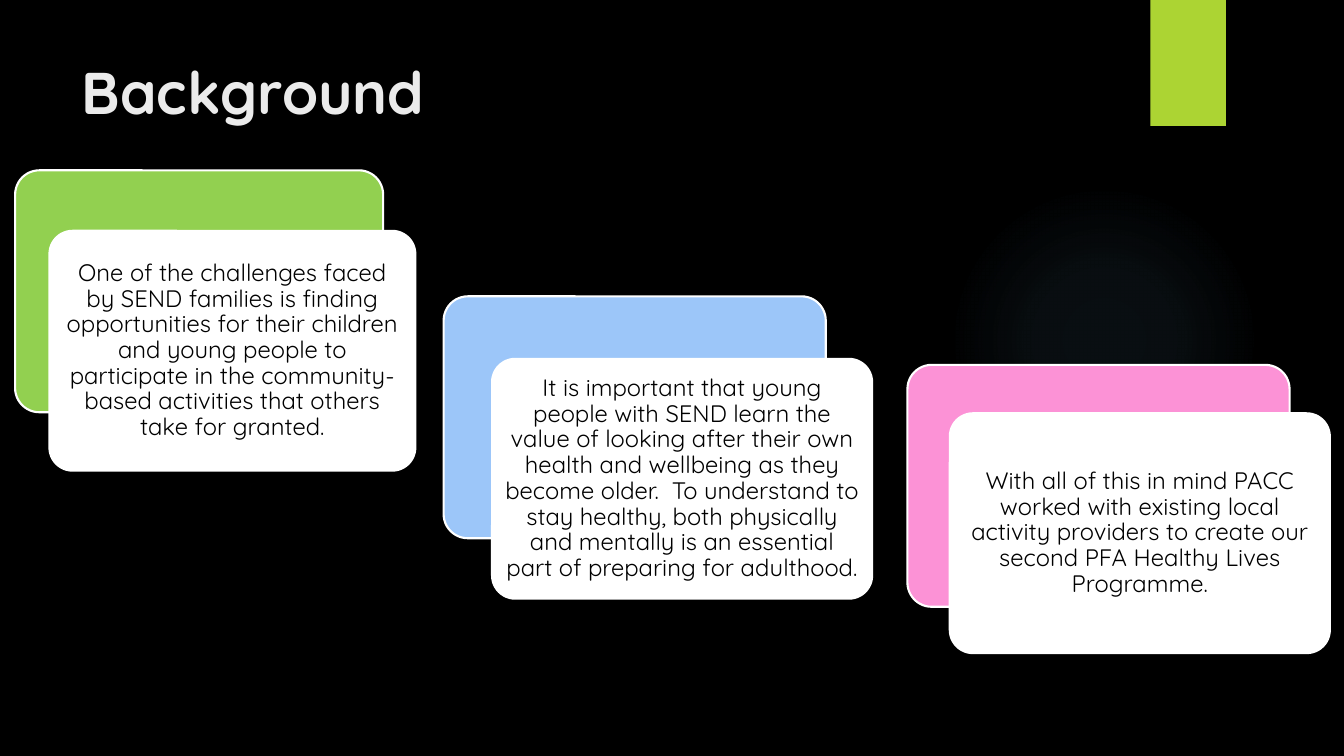
from lxml import etree
from pptx import Presentation
from pptx.dml.color import RGBColor
from pptx.enum.shapes import MSO_SHAPE
from pptx.enum.text import MSO_ANCHOR, MSO_AUTO_SIZE, PP_ALIGN
from pptx.oxml import parse_xml
from pptx.util import Inches, Pt

ELLIPSE, RECT, ROUNDED = MSO_SHAPE.OVAL, MSO_SHAPE.RECTANGLE, MSO_SHAPE.ROUNDED_RECTANGLE
TOP, MIDDLE = MSO_ANCHOR.TOP, MSO_ANCHOR.MIDDLE
LEFT, CENTER = PP_ALIGN.LEFT, PP_ALIGN.CENTER
NO_AUTOFIT = MSO_AUTO_SIZE.NONE
NS = "http://schemas.openxmlformats.org/drawingml/2006/main"

COLORS = {
    "black": "000000", "white": "FFFFFF", "title": "EBEBEB", "lime": "ACD433",
    "glow": "7AC4F0", "green": "92D050", "blue": "9CC6F9", "pink": "FC92D6",
}
GLOW_STOPS = [(0, 7), (36, 6), (69, 0)]
CARD_HEIGHT = 2.4
CARDS = [
    ("green", 3.65, (0.15, 1.69), (0.48, 2.28),
     "One of the challenges faced by SEND families is finding opportunities for their "
     "children and young people to participate in the community-based activities that "
     "others take for granted."),
    ("blue", 3.79, (4.4, 2.94), (4.87, 3.55),
     "It is important that young people with SEND learn the value of looking after their "
     "own health and wellbeing as they become older.  To understand to stay healthy, both "
     "physically and mentally is an essential part of preparing for adulthood. "),
    ("pink", 3.79, (9, 3.62), (9.41, 4.09),
     "With all of this in mind PACC worked with existing local activity providers to "
     "create our second PFA Healthy Lives Programme."),
]


def rgb(name):
    return RGBColor.from_string(COLORS[name])


class Deck:
    """Holds the style and current slide, and adds each kind of element."""

    font = "Quicksand"

    def __init__(self):
        self.prs = Presentation()
        self.prs.slide_width, self.prs.slide_height = Inches(13.33), Inches(7.5)
        self.s = self.prs.slides.add_slide(self.prs.slide_layouts[5])
        fill = self.s.background.fill
        fill.solid()
        fill.fore_color.rgb = rgb("black")

    def put_text(self, sp, text, color, frame, para, font):
        tf = sp.text_frame
        p = tf.paragraphs[0]
        r = p.add_run()
        r.text = text
        for target, values in ((tf, frame), (p, para), (r.font, font)):
            for key, value in values.items():
                setattr(target, key, value)
        r.font.name = self.font
        r.font.color.rgb = rgb(color)

    def title(self, text, x, y, w, h):
        sp = self.s.shapes.title
        sp.left, sp.top, sp.width, sp.height = map(Inches, (x, y, w, h))
        self.put_text(sp, text, "title",
                      {"vertical_anchor": TOP, "auto_size": NO_AUTOFIT, "word_wrap": True},
                      {"alignment": LEFT}, {"size": Pt(42), "bold": True})

    def shape(self, kind, x, y, w, h, fill, line=None):
        sp = self.s.shapes.add_shape(kind, *map(Inches, (x, y, w, h)))
        sp.shadow.inherit = False
        sp.fill.solid()
        sp.fill.fore_color.rgb = rgb(fill)
        if line:
            sp.line.color.rgb = rgb(line)
            sp.line.width = Pt(1.5)
        else:
            sp.line.fill.background()
        if kind == ROUNDED:
            sp.adjustments[0] = 0.1
        return sp

    def glow(self, x, y, size):
        sp = self.shape(ELLIPSE, x, y, size, size, "glow")
        stops = "".join(
            f'<a:gs pos="{pos * 1000}"><a:srgbClr val="{COLORS["glow"]}">'
            f'<a:alpha val="{alpha * 1000}"/></a:srgbClr></a:gs>'
            for pos, alpha in GLOW_STOPS)
        grad = parse_xml(
            f'<a:gradFill xmlns:a="{NS}"><a:gsLst>{stops}</a:gsLst><a:path path="circle">'
            '<a:fillToRect l="50000" t="50000" r="50000" b="50000"/></a:path></a:gradFill>')
        solid = sp.element.spPr.find(etree.QName(NS, "solidFill"))
        sp.element.spPr.replace(solid, grad)

    def card(self, color, width, back, front, text):
        self.shape(ROUNDED, *back, width, CARD_HEIGHT, color, "white")
        sp = self.shape(ROUNDED, *front, width, CARD_HEIGHT, "white")
        frame = {f"margin_{side}": Inches(0.07) for side in ("left", "top", "right", "bottom")}
        frame.update(vertical_anchor=MIDDLE, word_wrap=True)
        self.put_text(sp, text, "black", frame,
                      {"alignment": CENTER, "line_spacing": 0.9}, {"size": Pt(17)})


def main():
    deck = Deck()
    deck.glow(9.41, 1.83, 3.08)
    deck.shape(RECT, 11.41, 0, 0.75, 1.25, "lime")
    deck.title("Background", 0.71, 0.5, 10.29, 1.53)
    for card in CARDS:
        deck.card(*card)
    deck.prs.save("out.pptx")


if __name__ == "__main__":
    main()
